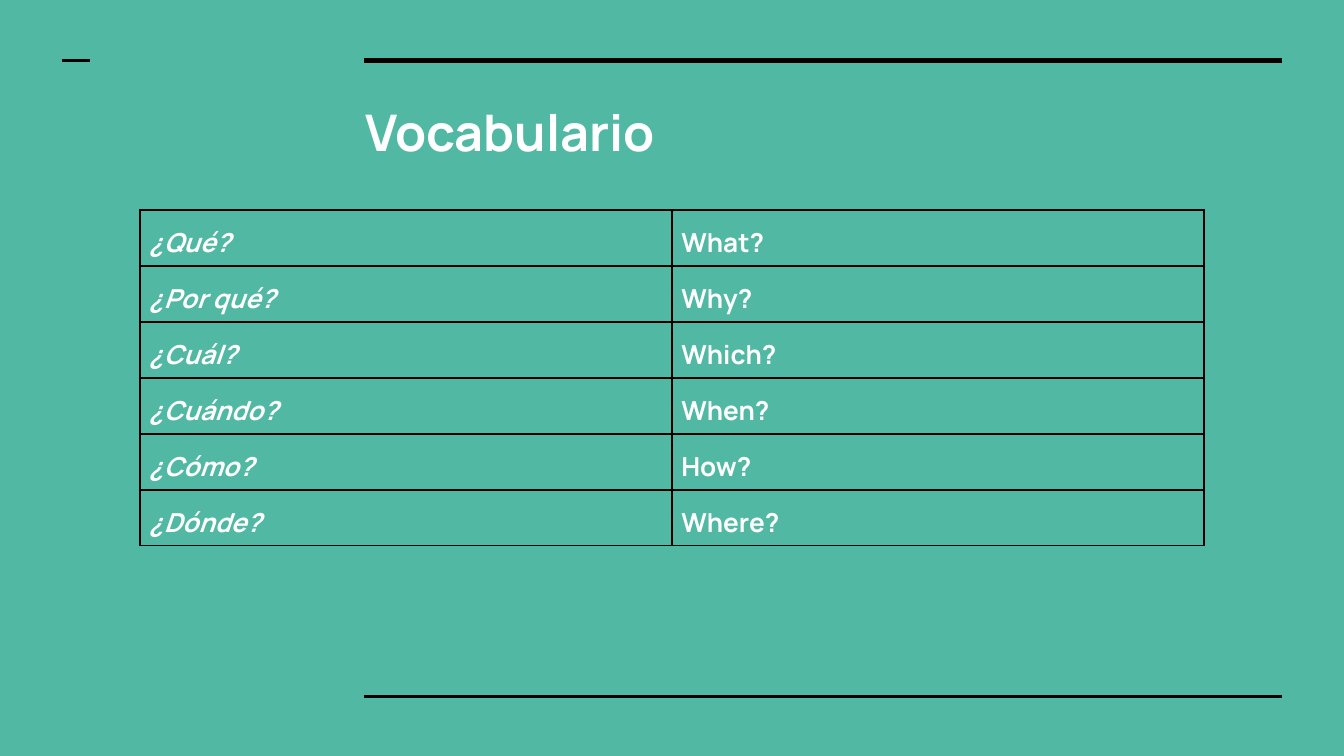
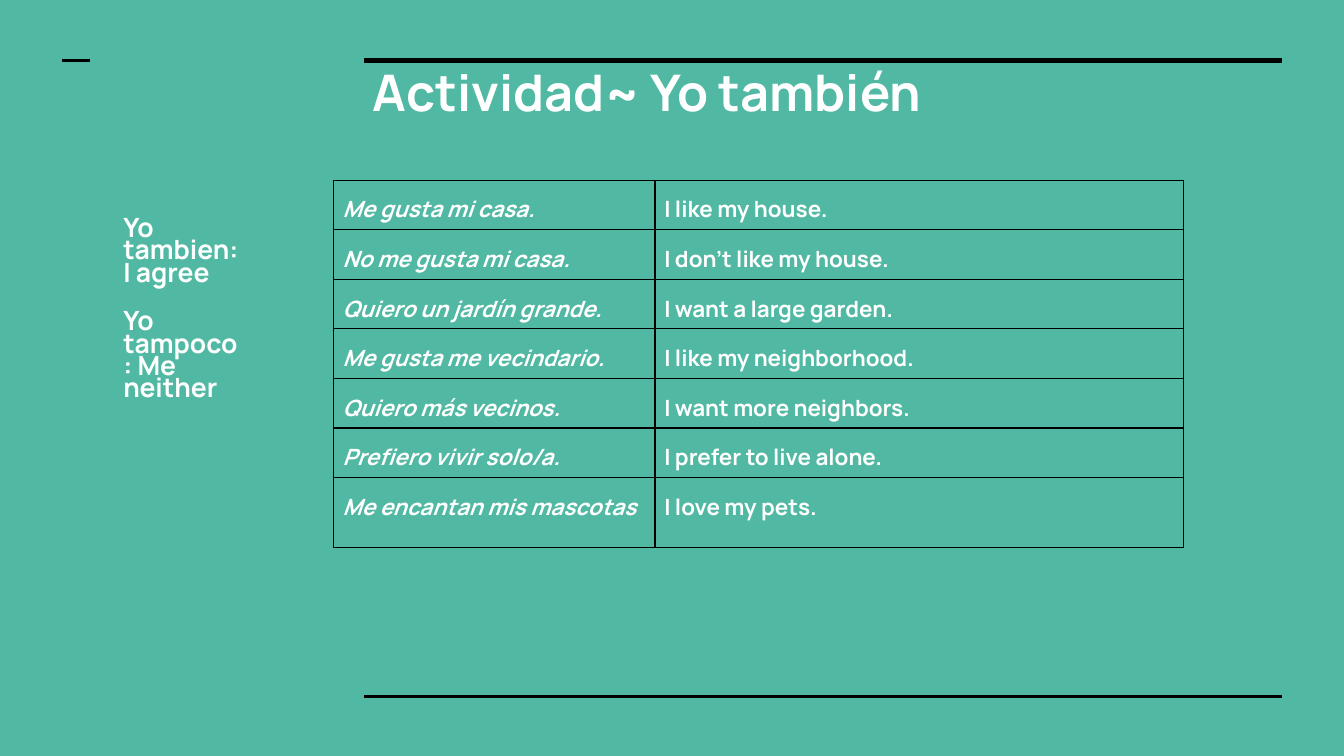
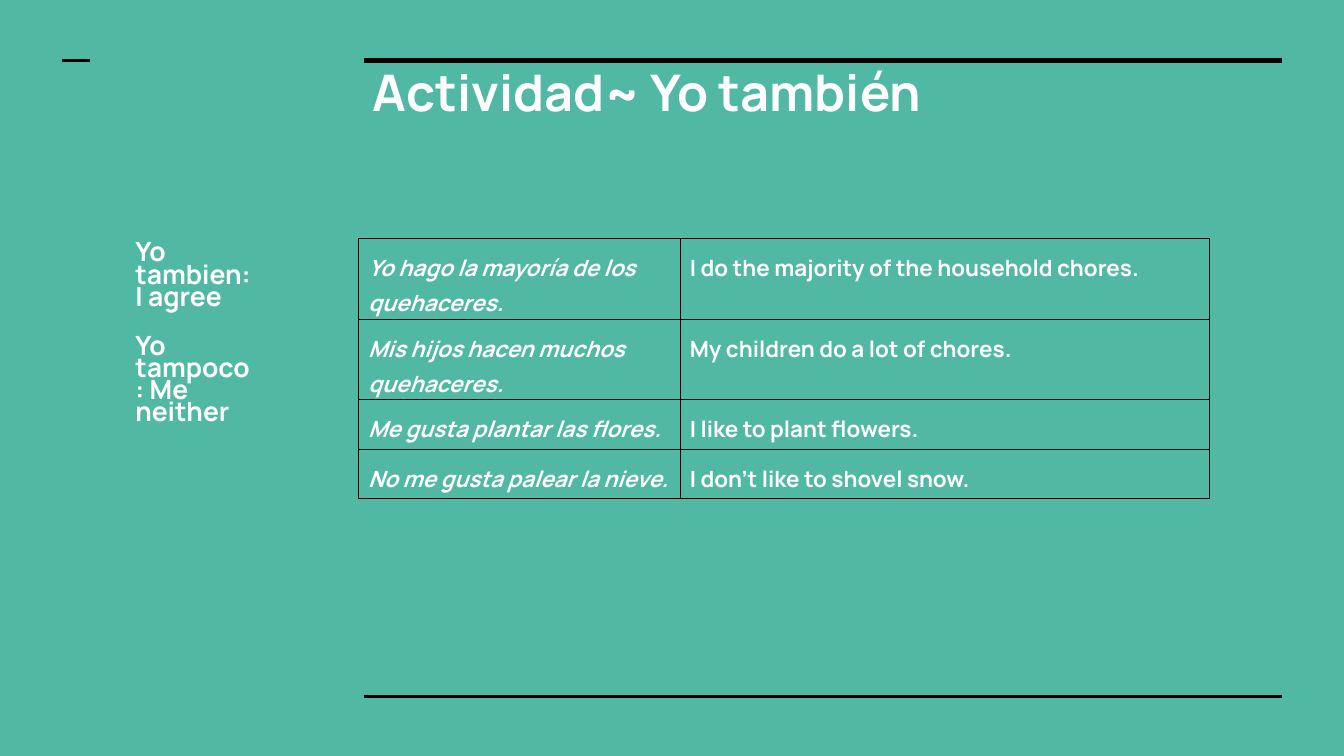
from dataclasses import dataclass

from lxml import etree
from pptx import Presentation
from pptx.dml.color import RGBColor
from pptx.enum.shapes import MSO_CONNECTOR
from pptx.enum.text import MSO_ANCHOR
from pptx.oxml.ns import qn
from pptx.slide import Slide
from pptx.text.text import TextFrame, _Paragraph
from pptx.util import Pt

STRAIGHT = MSO_CONNECTOR.STRAIGHT
TOP, MIDDLE = MSO_ANCHOR.TOP, MSO_ANCHOR.MIDDLE

GREEN = RGBColor(0x51, 0xB9, 0xA3)
BLACK = RGBColor(0x00, 0x00, 0x00)
WHITE = RGBColor(0xFF, 0xFF, 0xFF)
FACE = "Manrope"
PAD = 5


@dataclass(frozen=True)
class Rule:
    left: float
    right: float
    y: float
    weight: float


@dataclass(frozen=True)
class Box:
    left: float
    top: float
    width: float
    height: float


@dataclass(frozen=True)
class Grid:
    box: Box
    cols: tuple[float, ...]
    rows: tuple[float, ...]
    size: float
    pairs: tuple[tuple[str, str], ...]


@dataclass(frozen=True)
class Page:
    title: str
    head: Box
    grid: Grid
    side: Box | None = None


# Lines that every slide carries
RULES = (
    Rule(195, 687, 32.5, 3),
    Rule(195, 687, 373, 1.5),
    Rule(33.5, 48, 32.5, 1.5),
)

REPLIES = ("Yo tambien: I agree", "Yo tampoco: Me neither")
ACT = "Actividad~ Yo también"
ACT_HEAD = Box(192.5, 23.8, 497.5, 49.7)
ACT_COLS = (172.4, 283.2)

PAGES = (
    Page(
        "Vocabulario",
        Box(188.9, 45.4, 497.5, 49.7),
        Grid(Box(75, 112.5, 570, 180), (285, 285), (30,) * 6, 14, (
            ("¿Qué?", "What?"),
            ("¿Por qué?", "Why?"),
            ("¿Cuál?", "Which?"),
            ("¿Cuándo?", "When?"),
            ("¿Cómo?", "How?"),
            ("¿Dónde?", "Where?"),
        )),
    ),
    Page(
        ACT,
        ACT_HEAD,
        Grid(Box(178.5, 96.5, 455.6, 190.8), ACT_COLS,
             (21.6,) * 6 + (37.5,), 12, (
            ("Me gusta mi casa.", "I like my house."),
            ("No me gusta mi casa.", "I don’t like my house."),
            ("Quiero un jardín grande.", "I want a large garden."),
            ("Me gusta me vecindario.", "I like my neighborhood."),
            ("Quiero más vecinos.", "I want more neighbors."),
            ("Prefiero vivir solo/a.", "I prefer to live alone."),
            ("Me encantan mis mascotas", "I love my pets."),
        )),
        Box(59, 108.7, 79.2, 132.5),
    ),
    Page(
        ACT,
        ACT_HEAD,
        Grid(Box(192.2, 127.9, 455.6, 135.4), ACT_COLS,
             (36.7, 36, 21.6, 21.6), 12, (
            ("Yo hago la mayoría de los quehaceres.",
             "I do the majority of the household chores."),
            ("Mis hijos hacen muchos quehaceres.",
             "My children do a lot of chores."),
            ("Me gusta plantar las flores.", "I like to plant flowers."),
            ("No me gusta palear la nieve.", "I don’t like to shovel snow."),
        )),
        Box(65.5, 121.7, 79.2, 132.5),
    ),
)


def style(para: _Paragraph, size: float, slant: bool = False) -> None:
    font = para.font
    font.name, font.size = FACE, Pt(size)
    font.bold, font.italic = True, slant
    font.color.rgb = WHITE


def add_rule(slide: Slide, rule: Rule) -> None:
    line = slide.shapes.add_connector(
        STRAIGHT, Pt(rule.left), Pt(rule.y), Pt(rule.right), Pt(rule.y))
    line.line.color.rgb = BLACK
    line.line.width = Pt(rule.weight)
    etree.SubElement(line._element.spPr, qn("a:effectLst"))


def add_box(slide: Slide, box: Box, inset: float, anchor: MSO_ANCHOR) -> TextFrame:
    shape = slide.shapes.add_textbox(
        Pt(box.left), Pt(box.top), Pt(box.width), Pt(box.height))
    frame = shape.text_frame
    frame.word_wrap = True
    frame.vertical_anchor = anchor
    frame.margin_left = frame.margin_right = Pt(7.2)
    frame.margin_top = frame.margin_bottom = Pt(inset)
    return frame


def add_title(slide: Slide, text: str, box: Box) -> None:
    frame = add_box(slide, box, 7.2, MIDDLE)
    frame.text = text
    style(frame.paragraphs[0], 27)


def add_side(slide: Slide, box: Box) -> None:
    frame = add_box(slide, box, 9, TOP)
    frame.text = "\n".join(REPLIES)
    for i, para in enumerate(frame.paragraphs):
        para.line_spacing = 0.7
        if i:
            para.space_before = Pt(14.2)
        style(para, 14.2)


def add_edges(cell) -> None:
    props = cell._tc.get_or_add_tcPr()
    for i, tag in enumerate(("a:lnL", "a:lnR", "a:lnT", "a:lnB")):
        edge = etree.Element(qn(tag), w=str(Pt(0.75)))
        fill = etree.SubElement(edge, qn("a:solidFill"))
        etree.SubElement(fill, qn("a:srgbClr"), val=str(BLACK))
        props.insert(i, edge)


def add_grid(slide: Slide, grid: Grid) -> None:
    box = grid.box
    frame = slide.shapes.add_table(
        len(grid.rows), len(grid.cols),
        Pt(box.left), Pt(box.top), Pt(box.width), Pt(box.height))
    table = frame.table
    table.first_row = table.horz_banding = False
    for col, width in zip(table.columns, grid.cols):
        col.width = Pt(width)
    for row, height, pair in zip(table.rows, grid.rows, grid.pairs):
        row.height = Pt(height)
        for i, (cell, text) in enumerate(zip(row.cells, pair)):
            cell.text = text
            cell.margin_left = cell.margin_right = Pt(PAD)
            cell.margin_top = cell.margin_bottom = Pt(PAD)
            cell.fill.background()
            add_edges(cell)
            para = cell.text_frame.paragraphs[0]
            para.line_spacing = 1.15
            style(para, grid.size, slant=i == 0)  # Spanish column in italics
    frame.height = Pt(box.height)


def main() -> None:
    deck = Presentation()
    deck.slide_width, deck.slide_height = Pt(720), Pt(405)
    for page in PAGES:
        slide = deck.slides.add_slide(deck.slide_layouts[6])
        slide.background.fill.solid()
        slide.background.fill.fore_color.rgb = GREEN
        for rule in RULES:
            add_rule(slide, rule)
        add_title(slide, page.title, page.head)
        if page.side:
            add_side(slide, page.side)
        add_grid(slide, page.grid)
    deck.save("out.pptx")


if __name__ == "__main__":
    main()
